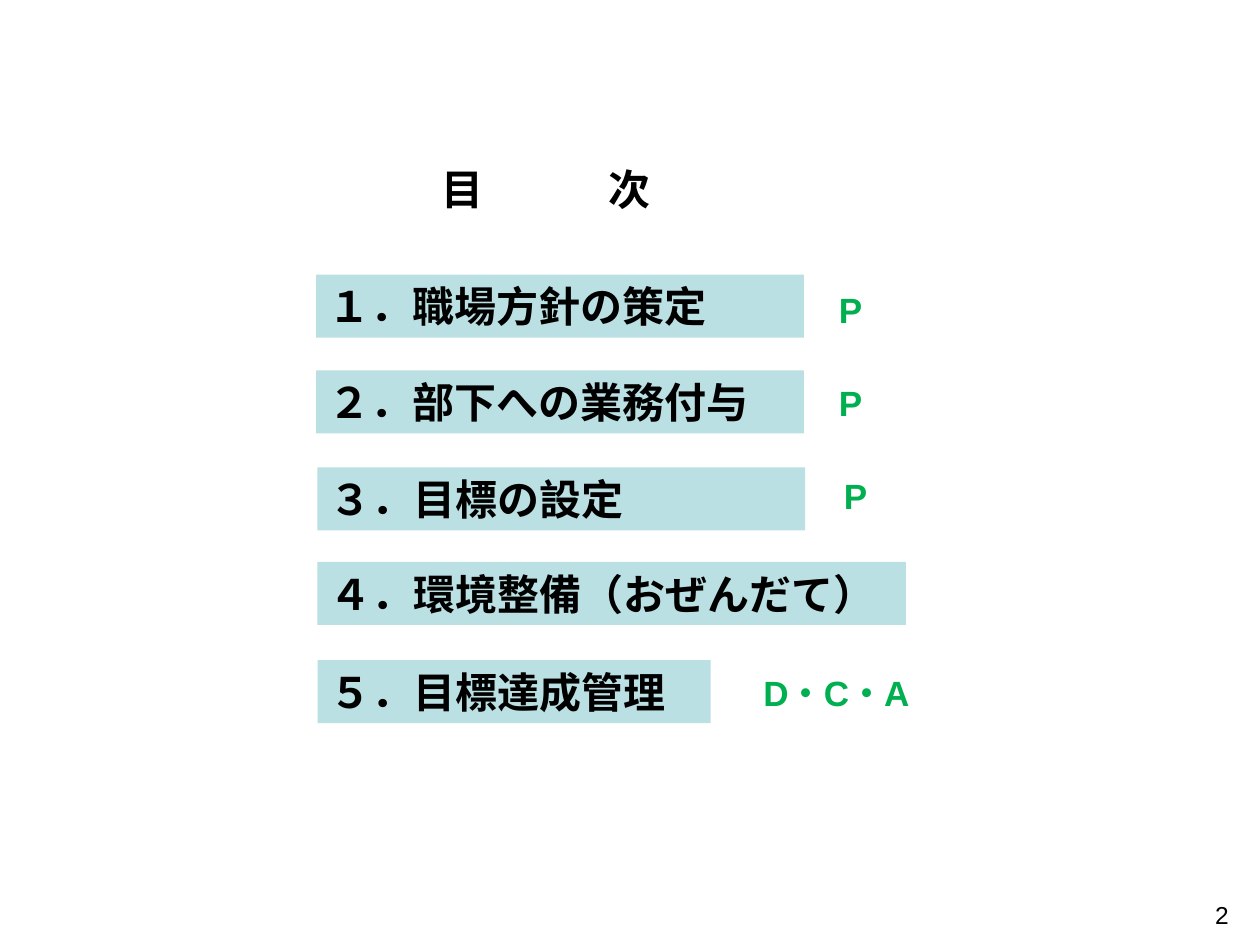
from dataclasses import dataclass

from pptx import Presentation
from pptx import util as u
from pptx.dml.color import RGBColor
from pptx.enum import shapes, text


@dataclass(frozen=True)
class Theme:
    font: str = "Arial"
    ink: str = "000000"
    band: str = "BBE0E3"
    phase: str = "00B050"
    heading_size: int = 24
    phase_size: int = 20
    number_size: int = 14


theme = Theme()


def place(shape, left, top, width, height):
    box = {"left": left, "top": top, "width": width, "height": height}
    for name, value in box.items():
        setattr(shape, name, u.Inches(value))


def write(shape, words, size, color, bold=True, align=text.PP_ALIGN.LEFT, inset=(0.05, 0.05)):
    frame = shape.text_frame
    frame_format = {
        "word_wrap": True,
        "auto_size": text.MSO_AUTO_SIZE.NONE,
        "vertical_anchor": text.MSO_ANCHOR.TOP,
        "margin_left": u.Inches(0.1),
        "margin_right": u.Inches(0.1),
        "margin_top": u.Inches(inset[0]),
        "margin_bottom": u.Inches(inset[1]),
    }
    for name, value in frame_format.items():
        setattr(frame, name, value)
    frame.text = words
    paragraph = frame.paragraphs[0]
    paragraph.alignment = align
    paragraph.line_spacing = 1.0
    paragraph.space_before = u.Pt(0)
    font = paragraph.runs[0].font
    for name, value in {"name": theme.font, "size": u.Pt(size), "bold": bold}.items():
        setattr(font, name, value)
    font.color.rgb = RGBColor.from_string(color)


presentation = Presentation()
presentation.slide_width = u.Inches(10)
presentation.slide_height = u.Inches(7.5)
slide = presentation.slides.add_slide(presentation.slide_layouts[5])

title = slide.shapes.title
place(title, 3.4, 1.25, 2.84, 0.5)
write(title, "目　　　次", theme.heading_size, theme.ink)

chapters = [
    ("１．職場方針の策定", 2.51, 2.18, 3.87),
    ("２．部下への業務付与", 2.51, 2.94, 3.87),
    ("３．目標の設定", 2.52, 3.71, 3.87),
    ("４．環境整備（おぜんだて）", 2.52, 4.46, 4.67),
    ("５．目標達成管理", 2.52, 5.24, 3.12),
]
for words, left, top, width in chapters:
    chapter = slide.shapes.add_shape(shapes.MSO_SHAPE.RECTANGLE, 0, 0, 0, 0)
    place(chapter, left, top, width, 0.5)
    chapter.shadow.inherit = False
    chapter.fill.solid()
    chapter.fill.fore_color.rgb = RGBColor.from_string(theme.band)
    chapter.line.fill.background()
    write(chapter, words, theme.heading_size, theme.ink)

phases = [
    ("P", 6.56, 2.24, 0.63),
    ("P", 6.56, 2.98, 0.63),
    ("P", 6.6, 3.72, 0.63),
    ("D・C・A", 5.96, 5.28, 1.82),
]
for words, left, top, width in phases:
    phase = slide.shapes.add_textbox(0, 0, 0, 0)
    place(phase, left, top, width, 0.44)
    write(phase, words, theme.phase_size, theme.phase)

page_number = slide.shapes.add_textbox(0, 0, 0, 0)
place(page_number, 7.52, 7.06, 2.33, 0.29)
write(page_number, "2", theme.number_size, theme.ink, False, text.PP_ALIGN.RIGHT, (0.08, 0))

presentation.save("out.pptx")
